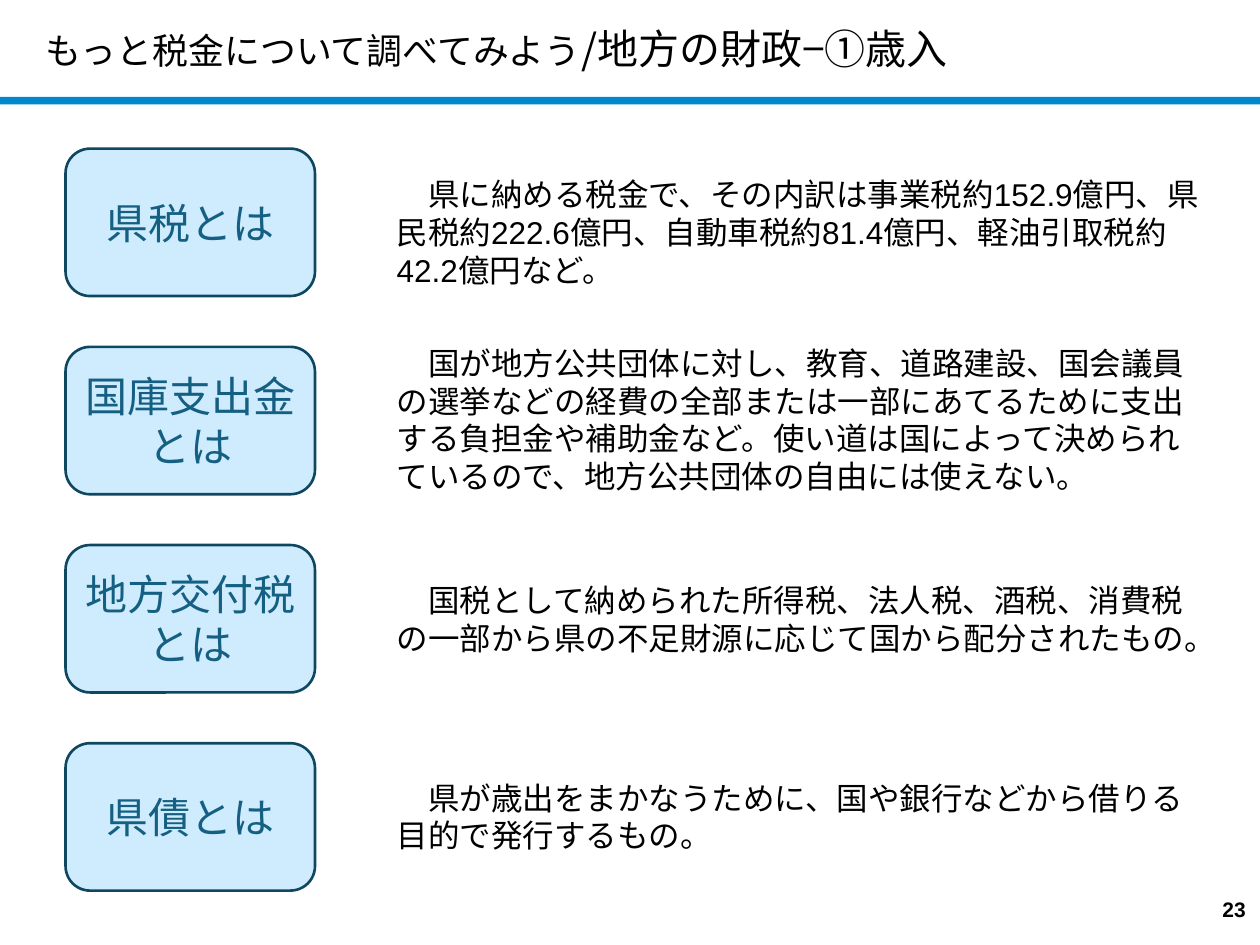
from lxml.etree import SubElement
from pptx import Presentation
from pptx.dml.color import RGBColor
from pptx.enum.shapes import MSO_SHAPE
from pptx.enum.text import MSO_ANCHOR, PP_ALIGN
from pptx.oxml.ns import qn
from pptx.util import Inches, Pt


def color(hex_value):
    return RGBColor.from_string(hex_value)


def add_run(paragraph, text, size, font_color="000000", name="Arial", bold=False):
    run = paragraph.add_run()
    run.text = text
    run.font.color.rgb = color(font_color)
    font_format = {"size": Pt(size), "name": name, "bold": bold}
    for attribute, value in font_format.items():
        setattr(run.font, attribute, value)
    return run


presentation = Presentation()
presentation.slide_width = Inches(10)
presentation.slide_height = Inches(7.5)
slide = presentation.slides.add_slide(presentation.slide_layouts[6])

# Rule below the title
rule = slide.shapes.add_shape(
    MSO_SHAPE.RECTANGLE, Inches(0), Inches(0.77), Inches(10), Inches(0.06)
)
rule.shadow.inherit = False
rule.fill.solid()
rule.fill.fore_color.rgb = color("0088CC")
rule.line.fill.background()

# Title
title = slide.shapes.add_textbox(Inches(0.26), Inches(-0.02), Inches(8.5), Inches(0.8))
title.text_frame.word_wrap = True
title.text_frame.vertical_anchor = MSO_ANCHOR.MIDDLE
title_font = "Noto Sans CJK JP"
for text, size in [("もっと税金について調べてみよう", 20.5), ("/地方の財政−①歳入", 23.4)]:
    run = add_run(title.text_frame.paragraphs[0], text, size, name=title_font)
    SubElement(run.font._element, qn("a:ea")).set("typeface", title_font)

# Terms on the left, explanations on the right: term, text, text top, text height
entries = [
    ("県税とは",
     "県に納める税金で、その内訳は事業税約152.9億円、県民税約222.6億円、"
     "自動車税約81.4億円、軽油引取税約42.2億円など。", 1.34, 1.01),
    ("国庫支出金とは",
     "国が地方公共団体に対し、教育、道路建設、国会議員の選挙などの経費の全部または"
     "一部にあてるために支出する負担金や補助金など。使い道は国によって決められて"
     "いるので、地方公共団体の自由には使えない。", 2.68, 1.31),
    ("地方交付税とは",
     "国税として納められた所得税、法人税、酒税、消費税の一部から県の不足財源に応じて"
     "国から配分されたもの。", 4.56, 0.71),
    ("県債とは",
     "県が歳出をまかなうために、国や銀行などから借りる目的で発行するもの。", 6.13, 0.71),
]
first_top, row_pitch = 1.18, 1.573
for row, (term, explanation, text_top, text_height) in enumerate(entries):
    box = slide.shapes.add_shape(
        MSO_SHAPE.ROUNDED_RECTANGLE,
        Inches(0.52), Inches(first_top + row * row_pitch), Inches(1.98), Inches(1.17),
    )
    box.shadow.inherit = False
    box.fill.solid()
    box.fill.fore_color.rgb = color("CEECFE")
    box.line.color.rgb = color("104760")
    box.line.width = Pt(1.5)
    box.text_frame.word_wrap = True
    box.text_frame.vertical_anchor = MSO_ANCHOR.MIDDLE
    paragraph = box.text_frame.paragraphs[0]
    paragraph.alignment = PP_ALIGN.CENTER
    add_run(paragraph, term, 24, "156082")

    description = slide.shapes.add_textbox(
        Inches(3.05), Inches(text_top), Inches(6.62), Inches(text_height)
    )
    description.text_frame.word_wrap = True
    paragraph = description.text_frame.paragraphs[0]
    # First line indented by one character
    paragraph._p.get_or_add_pPr().set("indent", str(Inches(0.25)))
    add_run(paragraph, explanation, 18)

# Page number
page_number = slide.shapes.add_textbox(Inches(9.59), Inches(7.05), Inches(0.41), Inches(0.33))
page_number.text_frame.word_wrap = False
page_number.text_frame.vertical_anchor = MSO_ANCHOR.MIDDLE
paragraph = page_number.text_frame.paragraphs[0]
paragraph.alignment = PP_ALIGN.CENTER
add_run(paragraph, "23", 12, bold=True)

presentation.save("out.pptx")
